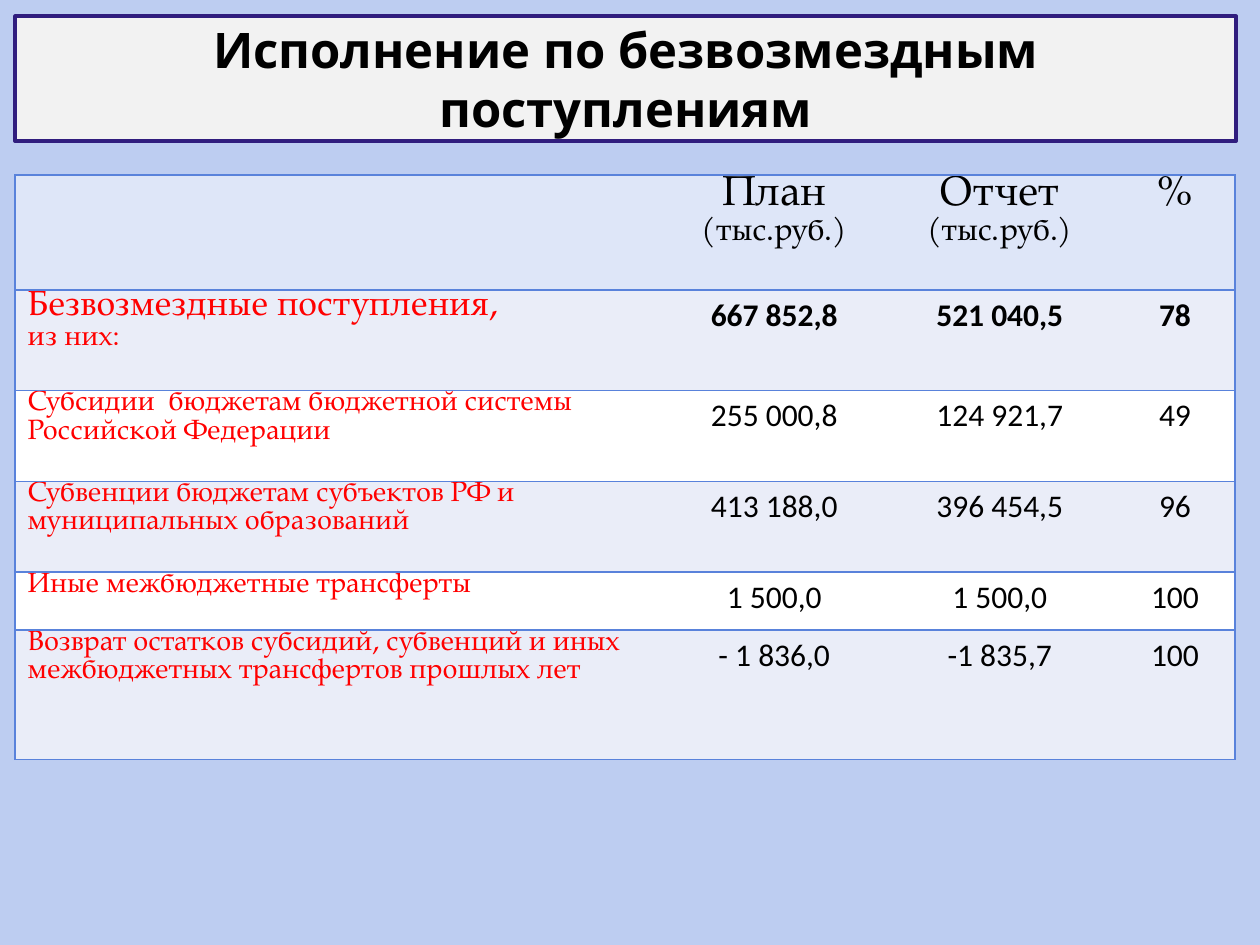
import pptx
import pptx.util
import pptx.dml.color
import pptx.enum.shapes
import pptx.enum.text
import pptx.oxml
import pptx.oxml.ns
from pptx.util import Inches

RGBColor = pptx.dml.color.RGBColor
BACKGROUND = RGBColor(0xBD, 0xCD, 0xF1)
TITLE_FILL = RGBColor(0xF2, 0xF2, 0xF2)
TITLE_LINE = RGBColor(0x30, 0x1D, 0x7E)
HEADER_FILL = RGBColor(0xDE, 0xE6, 0xF8)
BAND_FILL = RGBColor(0xEA, 0xED, 0xF8)
WHITE = RGBColor(0xFF, 0xFF, 0xFF)
BLACK = RGBColor(0, 0, 0)
RED = RGBColor(0xFF, 0, 0)
BORDER = RGBColor(0x59, 0x82, 0xDB)

SERIF = "TeX Gyre Pagella"
CENTER = pptx.enum.text.PP_ALIGN.CENTER
LEFT = pptx.enum.text.PP_ALIGN.LEFT

COLUMN_WIDTHS = [5.15, 1.75, 1.83, 0.95]
ROW_HEIGHTS = [0.91, 0.8, 0.72, 0.72, 0.46, 1.03]
UNIT = ("(тыс.руб.)", 18)
HEADERS = [[], [("План ", 24), UNIT], [("Отчет ", 24), UNIT], [("%", 24)]]
ROWS = [
    ([("Безвозмездные поступления,", 20), ("из них:", 16)],
     ["667 852,8", "521 040,5", "78"]),
    ([("Субсидии  бюджетам бюджетной системы Российской Федерации", 16)],
     ["255 000,8", "124 921,7", "49"]),
    ([("Субвенции бюджетам субъектов РФ и муниципальных образований", 16)],
     ["413 188,0", "396 454,5", "96"]),
    ([("Иные межбюджетные трансферты", 16)],
     ["1 500,0", "1 500,0", "100"]),
    ([("Возврат остатков субсидий, субвенций и иных межбюджетных трансфертов прошлых лет", 16)],
     ["- 1 836,0", "-1 835,7", "100"]),
]


def add_text(para, text, size, font, color=BLACK, bold=False, align=CENTER):
    para.alignment = align
    span = para.add_run()
    span.text = text
    span.font.size = pptx.util.Pt(size)
    span.font.name = font
    span.font.bold = bold
    span.font.color.rgb = color


def add_title(page, left, top, width, height):
    box = page.shapes.add_shape(pptx.enum.shapes.MSO_SHAPE.RECTANGLE, left, top, width, height)
    box.shadow.inherit = False
    box.fill.solid()
    box.fill.fore_color.rgb = TITLE_FILL
    box.line.color.rgb = TITLE_LINE
    box.line.width = pptx.util.Pt(2.25)
    frame = box.text_frame
    frame.word_wrap = True
    frame.vertical_anchor = pptx.enum.text.MSO_ANCHOR.MIDDLE
    add_text(frame.paragraphs[0], "Исполнение по безвозмездным поступлениям",
             size=28, font="Noto Sans", bold=True)


def style_cell(cell, fill, sides, margin_x, margin_y):
    """Set margins, then borders, then fill: the order the cell's XML requires."""
    cell.margin_left = cell.margin_right = Inches(margin_x)
    cell.margin_top = cell.margin_bottom = Inches(margin_y)
    properties = cell._tc.get_or_add_tcPr()
    for side in ("L", "R", "T", "B"):
        paint = (f'<a:solidFill><a:srgbClr val="{BORDER}"/></a:solidFill>'
                 if side in sides else "<a:noFill/>")
        properties.append(pptx.oxml.parse_xml(
            f'<a:ln{side} {pptx.oxml.ns.nsdecls("a")} w="{pptx.util.Pt(1)}">{paint}</a:ln{side}>'))
    cell.fill.solid()
    cell.fill.fore_color.rgb = fill


def add_budget_table(page, left, top, width, height):
    table = page.shapes.add_table(len(ROW_HEIGHTS), len(COLUMN_WIDTHS),
                                  left, top, width, height).table
    for column, size in zip(table.columns, COLUMN_WIDTHS):
        column.width = Inches(size)
    for row, size in zip(table.rows, ROW_HEIGHTS):
        row.height = Inches(size)

    last = len(COLUMN_WIDTHS) - 1
    for row_index in range(len(ROW_HEIGHTS)):
        fill = HEADER_FILL if row_index == 0 else (BAND_FILL if row_index % 2 else WHITE)
        for column_index in range(len(COLUMN_WIDTHS)):
            sides = "TB" + {0: "L", last: "R"}.get(column_index, "")
            is_value = row_index > 0 and column_index > 0
            style_cell(table.cell(row_index, column_index), fill, sides,
                       margin_x=0.11 if is_value else 0.1,
                       margin_y=0.05 if is_value else 0)

    for column_index, spans in enumerate(HEADERS):
        para = table.cell(0, column_index).text_frame.paragraphs[0]
        for text, size in spans:
            add_text(para, text, size=size, font=SERIF)

    for row_index, (labels, values) in enumerate(ROWS, start=1):
        frame = table.cell(row_index, 0).text_frame
        for label_index, (text, size) in enumerate(labels):
            para = frame.add_paragraph() if label_index else frame.paragraphs[0]
            add_text(para, text, size=size, font=SERIF, color=RED, align=LEFT)
        for column_index, value in enumerate(values, start=1):
            para = table.cell(row_index, column_index).text_frame.paragraphs[0]
            add_text(para, value, size=18, font="Calibri", bold=row_index == 1)


def main():
    deck = pptx.Presentation()
    deck.slide_width, deck.slide_height = Inches(10), Inches(7.5)
    page = deck.slides.add_slide(deck.slide_layouts[6])
    page.background.fill.solid()
    page.background.fill.fore_color.rgb = BACKGROUND
    add_title(page, Inches(0.12), Inches(0.13), Inches(9.69), Inches(0.99))
    add_budget_table(page, Inches(0.12), Inches(1.39), Inches(9.69), Inches(4.63))
    deck.save("out.pptx")


if __name__ == "__main__":
    main()
